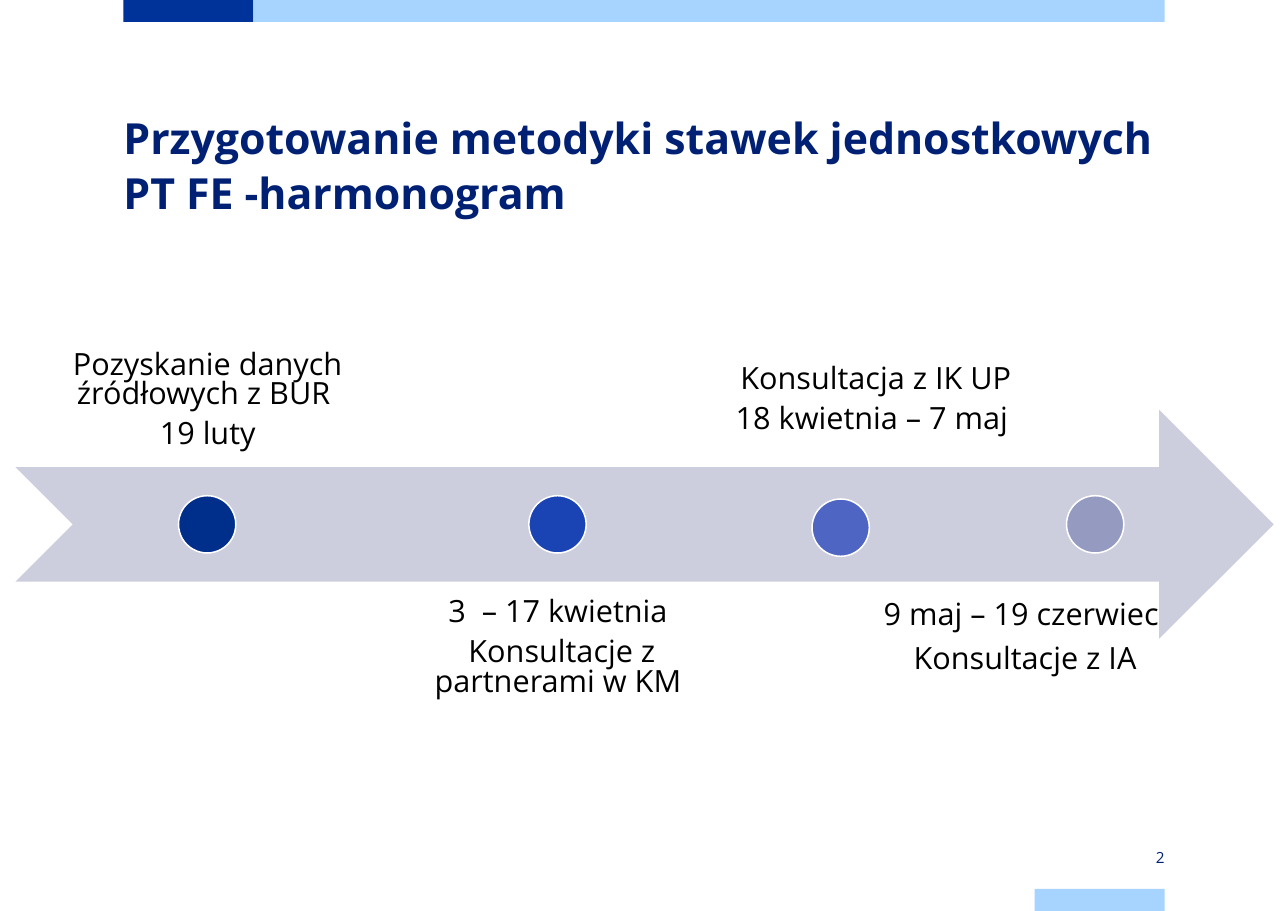
"""Build the timeline slide for the unit rate methodology."""
from pptx import Presentation
from pptx.dml.color import RGBColor
from pptx.enum.shapes import MSO_SHAPE
from pptx.enum.text import MSO_ANCHOR, MSO_AUTO_SIZE, PP_ALIGN
from pptx.util import Inches, Pt

RECT, OVAL, ARROW = MSO_SHAPE.RECTANGLE, MSO_SHAPE.OVAL, MSO_SHAPE.NOTCHED_RIGHT_ARROW
TOP, MID, LOW = MSO_ANCHOR.TOP, MSO_ANCHOR.MIDDLE, MSO_ANCHOR.BOTTOM
LEFT, CENTER, RIGHT = PP_ALIGN.LEFT, PP_ALIGN.CENTER, PP_ALIGN.RIGHT
WIDE, HIGH = 11.69, 8.27
EDGE, COL, BAR = 1.12, 1.18, 0.2
DOT = 0.52
NAVY, SKY, BLACK = "002073", "A6D3FF", "000000"

deck = Presentation()
deck.slide_width, deck.slide_height = Inches(WIDE), Inches(HIGH)
slide = deck.slides.add_slide(deck.slide_layouts[5])


def draw(kind, box, fill, line=None):
    """Add a filled preset shape."""
    shape = slide.shapes.add_shape(kind, *map(Inches, box))
    shape.shadow.inherit = False
    shape.fill.solid()
    shape.fill.fore_color.rgb = RGBColor.from_string(fill)
    if line:
        shape.line.color.rgb = RGBColor.from_string(line)
        shape.line.width = Pt(1)
    else:
        shape.line.fill.background()


def write(shape, lines, size, color, align, anchor, pad, space, after=0, bold=False):
    """Fill a text shape with one paragraph per line."""
    frame = shape.text_frame
    frame.word_wrap = True
    frame.auto_size = MSO_AUTO_SIZE.NONE
    frame.vertical_anchor = anchor
    frame.margin_left = frame.margin_right = Inches(pad[0])
    frame.margin_top = frame.margin_bottom = Inches(pad[1])
    for i, line in enumerate(lines):
        para = frame.add_paragraph() if i else frame.paragraphs[0]
        para.alignment = align
        para.line_spacing = space
        para.space_before, para.space_after = Pt(0), Pt(after)
        run = para.add_run()
        run.text = line
        run.font.name = "Open Sans"
        run.font.size = Pt(size)
        run.font.bold = bold
        run.font.color.rgb = RGBColor.from_string(color)


last = EDGE + 7 * COL + 0.01
draw(RECT, (EDGE, 0, COL, BAR), "003399")
draw(RECT, (EDGE + COL, 0, 7 * COL + 0.01, BAR), SKY)
draw(RECT, (last, HIGH - BAR, COL, BAR), SKY)

title = slide.shapes.title
title.left, title.top = Inches(EDGE), Inches(0.98)
title.width, title.height = Inches(8 * COL + 0.01), Inches(COL)
write(title, ["Przygotowanie metodyki stawek jednostkowych PT FE -harmonogram"],
      28, NAVY, LEFT, TOP, (0, 0), Pt(36), bold=True)

number = slide.shapes.add_textbox(*map(Inches, (last, 7.68, COL, BAR)))
write(number, ["2"], 10, NAVY, RIGHT, MID, (0, 0.08), 1.0)

draw(ARROW, (0.14, 3.72, 11.42, 2.08), "CCCEDE")
for x, y, fill in [(1.62, 4.5, "002E8B"), (4.8, 4.5, "1A43B4"),
                   (7.37, 4.53, "4E65C4"), (9.68, 4.5, "959BC0")]:
    draw(OVAL, (x, y, DOT, DOT), fill, "FFFFFF")

steps = [
    ((0.14, 2.17, 3.49, 2.08), LOW, (0.16, 0.16), 0.8,
     ["Pozyskanie danych źródłowych z BUR ", "19 luty"]),
    ((3.68, 5.28, 2.77, 2.08), TOP, (0.16, 0.16), 0.8,
     ["3  – 17 kwietnia", " Konsultacje z partnerami w KM"]),
    ((6.49, 3.21, 2.92, 0.9), LOW, (0.16, 0.16), 0.8,
     ["Konsultacja z IK UP", "18 kwietnia – 7 maj "]),
    ((7.89, 5.39, 2.83, 0.86), TOP, (0.1, 0.05), 0.9,
     ["9 maj – 19 czerwiec ", "Konsultacje z IA"]),
]
for box, anchor, pad, space, lines in steps:
    label = slide.shapes.add_textbox(*map(Inches, box))
    write(label, lines, 20, BLACK, CENTER, anchor, pad, space, after=7)

deck.save("out.pptx")
